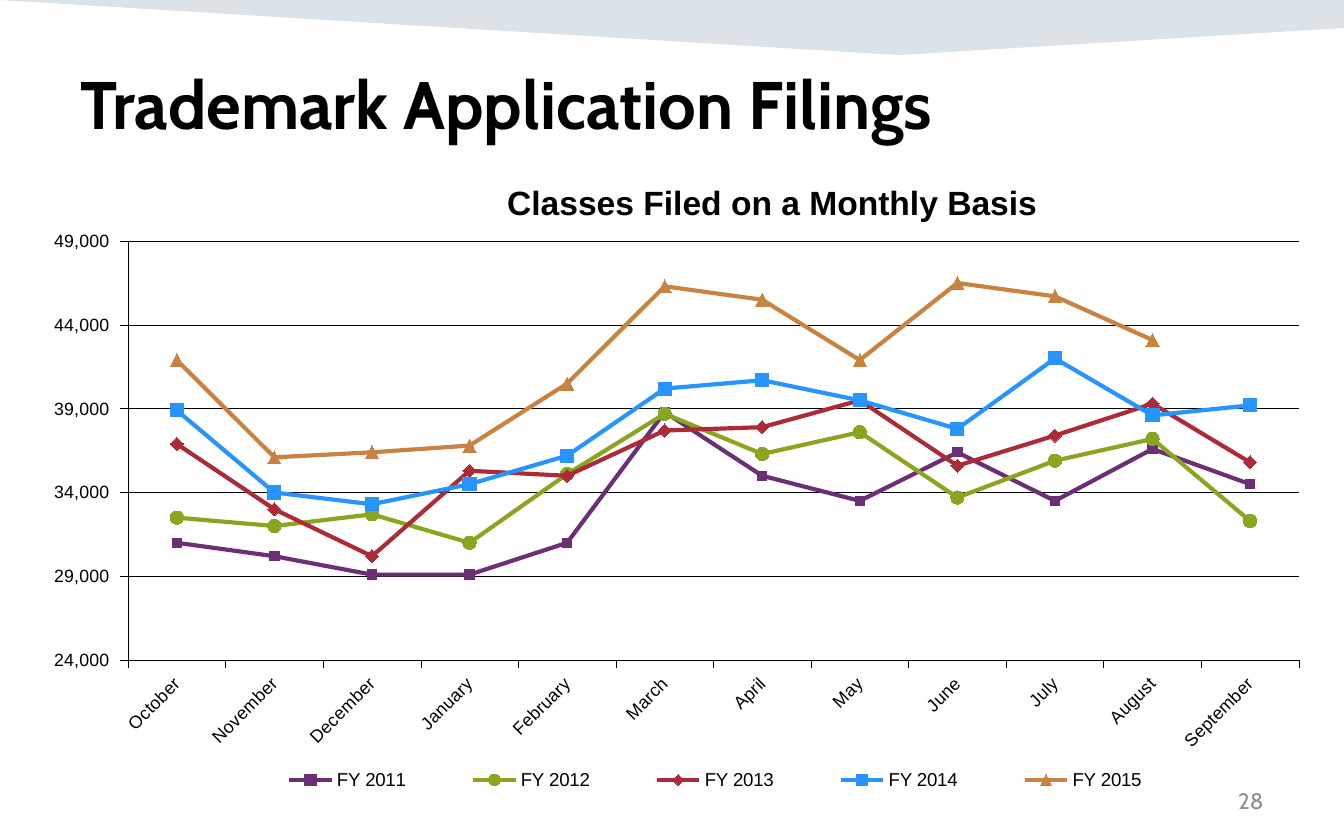
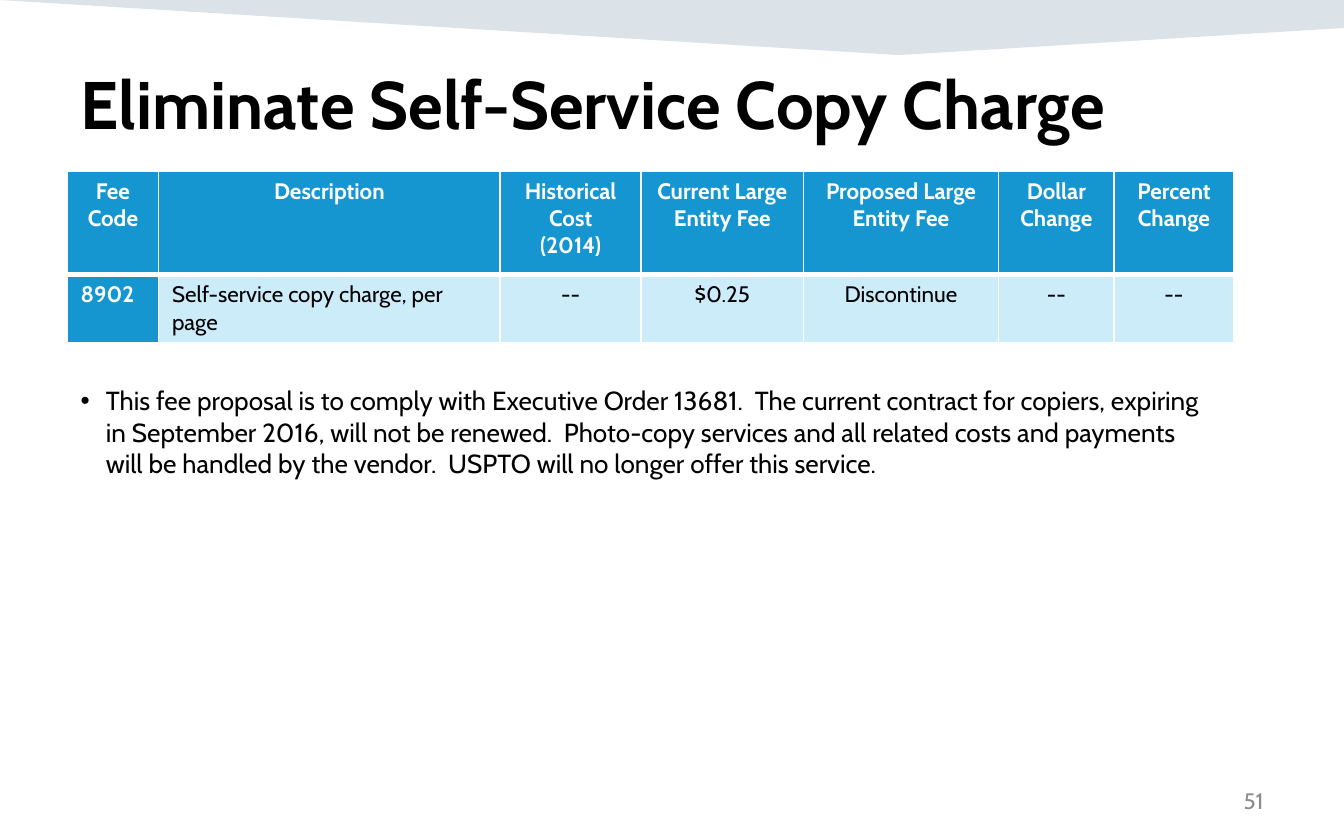
from dataclasses import dataclass

from lxml.etree import SubElement
from pptx import Presentation
from pptx.chart.data import CategoryChartData
from pptx.dml.color import RGBColor
from pptx.enum.chart import XL_CHART_TYPE, XL_LEGEND_POSITION, XL_MARKER_STYLE, XL_TICK_MARK
from pptx.enum.text import MSO_ANCHOR, MSO_AUTO_SIZE, PP_ALIGN
from pptx.oxml.ns import qn
from pptx.util import Pt


@dataclass(frozen=True)
class Theme:
    """Colours, fonts and type sizes of the deck."""
    ink: str = "000000"
    paper: str = "FFFFFF"
    band: str = "164469"
    band_alpha: int = 15000
    page_number: str = "8C8C8C"
    header: str = "1596D1"
    cell: str = "CCECFA"
    text_font: str = "Cabin"
    chart_font: str = "Arial"
    title_size: float = 36
    body_size: float = 14
    small_size: float = 12
    chart_title_size: float = 18
    legend_size: float = 10
    axis_size: float = 9.5


MONTHS = ["October", "November", "December", "January", "February", "March",
          "April", "May", "June", "July", "August", "September"]
FILINGS = [
    ("FY 2011", "6B2F75", XL_MARKER_STYLE.SQUARE, 5,
     [31000, 30200, 29100, 29100, 31000, 38800, 35000, 33500, 36400, 33500, 36600, 34500]),
    ("FY 2012", "88A620", XL_MARKER_STYLE.CIRCLE, 7,
     [32500, 32000, 32700, 31000, 35100, 38700, 36300, 37600, 33700, 35900, 37200, 32300]),
    ("FY 2013", "AC2B37", XL_MARKER_STYLE.DIAMOND, 7,
     [36900, 33000, 30200, 35300, 35000, 37700, 37900, 39500, 35600, 37400, 39300, 35800]),
    ("FY 2014", "2894FF", XL_MARKER_STYLE.SQUARE, 7,
     [38900, 34000, 33300, 34500, 36200, 40200, 40700, 39500, 37800, 42000, 38600, 39200]),
    ("FY 2015", "C88242", XL_MARKER_STYLE.TRIANGLE, 7,
     [41900, 36100, 36400, 36800, 40500, 46300, 45500, 41900, 46500, 45700, 43100, None]),
]
FEE_COLUMNS = [49, 183, 75.5, 87, 104.5, 62, 64]
FEE_ROWS = [
    ["Fee Code", "Description", "Historical Cost\n(2014)", "Current Large Entity Fee",
     "Proposed Large Entity Fee", "Dollar Change", "Percent Change"],
    ["8902", "Self-service copy charge, per page", "--", "$0.25", "Discontinue", "--", "--"],
]
COPIER_NOTE = (
    "This fee proposal is to comply with Executive Order 13681.  The current contract for "
    "copiers, expiring in September 2016, will not be renewed.  Photo-copy services and all "
    "related costs and payments will be handled by the vendor.  USPTO will no longer offer "
    "this service.")


def set_font(font, name, size, color, bold=False):
    """Apply a typeface, size, colour and weight."""
    font.name, font.size, font.bold = name, Pt(size), bold
    font.color.rgb = RGBColor.from_string(color)


def paint(fill, color):
    """Fill with one solid colour."""
    fill.solid()
    fill.fore_color.rgb = RGBColor.from_string(color)


def stroke(line, color, width):
    """Draw a solid line."""
    paint(line.fill, color)
    line.width = Pt(width)


def place(part, **fractions):
    """Position a chart part by fractions of the chart area."""
    for automatic in part.findall(qn("c:layout")):
        part.remove(automatic)
    layout = part.makeelement(qn("c:layout"))
    manual = SubElement(layout, qn("c:manualLayout"))
    if part.tag == qn("c:plotArea"):
        SubElement(manual, qn("c:layoutTarget"), val="inner")
    for side in ("x", "y"):
        SubElement(manual, qn(f"c:{side}Mode"), val="edge")
    for key, value in fractions.items():
        SubElement(manual, qn(f"c:{key}"), val=str(value))
    overlay = part.find(qn("c:overlay"))
    if overlay is None:
        part.insert(0, layout)
    else:
        overlay.addprevious(layout)


class Deck:
    """Holds the theme, the presentation and the current slide."""

    def __init__(self, theme):
        """Start an empty presentation."""
        self.theme = theme
        self.presentation = Presentation()
        self.presentation.slide_width, self.presentation.slide_height = Pt(720), Pt(450)
        self.slide = None

    def new_slide(self, layout, title):
        """Add a slide with its band and title."""
        self.slide = self.presentation.slides.add_slide(
            self.presentation.slide_layouts.get_by_name(layout))
        self.band()
        self.set_text(self.slide.shapes.title, title, (36, 29.5, 648, 40),
                      self.theme.title_size, self.theme.ink, bold=True)

    def set_text(self, shape, text, box, size, color, bold=False, align=PP_ALIGN.LEFT,
                 anchor=MSO_ANCHOR.TOP, bullet=None):
        """Place a text shape and format its single paragraph."""
        shape.left, shape.top, shape.width, shape.height = map(Pt, box)
        frame = shape.text_frame
        frame.text = text
        frame.word_wrap, frame.auto_size = True, MSO_AUTO_SIZE.NONE
        frame.vertical_anchor = anchor
        paragraph = frame.paragraphs[0]
        paragraph.alignment, paragraph.space_before = align, Pt(0)
        if bullet:
            properties = paragraph._p.get_or_add_pPr()
            properties.set("marL", str(Pt(13.5)))
            properties.set("indent", str(-Pt(13.5)))
            SubElement(properties, qn("a:buFont"), typeface=self.theme.chart_font)
            SubElement(properties, qn("a:buChar"), char=bullet)
        set_font(paragraph.font, self.theme.text_font, size, color, bold)

    def band(self):
        """Draw the tinted band along the top edge."""
        outline = self.slide.shapes.build_freeform(0, 0)
        outline.add_line_segments(
            [(Pt(x), Pt(y)) for x, y in [(720, 0), (720, 15), (481.5, 29.5)]], close=True)
        band = outline.convert_to_shape()
        band.shadow.inherit = False
        band.line.fill.background()
        paint(band.fill, self.theme.band)
        tint = band.element.find(".//" + qn("a:srgbClr"))
        SubElement(tint, qn("a:alpha"), val=str(self.theme.band_alpha))

    def page_number(self, number):
        """Set the page number at the lower right."""
        box = (516, 417, 168, 24)
        self.set_text(self.slide.shapes.add_textbox(*map(Pt, box)), str(number), box,
                      self.theme.small_size, self.theme.page_number,
                      align=PP_ALIGN.RIGHT, anchor=MSO_ANCHOR.MIDDLE)

    def bullet(self, text, box):
        """Set one bulleted statement in the body placeholder."""
        self.set_text(self.slide.placeholders[1], text, box, self.theme.body_size,
                      self.theme.ink, bullet="•")

    def line_chart(self, title, categories, rows, box):
        """Add a line chart with markers."""
        theme = self.theme
        data = CategoryChartData()
        data.categories = categories
        for name, _, _, _, values in rows:
            data.add_series(name, values)
        chart = self.slide.shapes.add_chart(
            XL_CHART_TYPE.LINE_MARKERS, *map(Pt, box), data).chart
        set_font(chart.font, theme.chart_font, theme.axis_size, theme.ink)

        chart.has_title = True
        chart.chart_title.text_frame.text = title
        set_font(chart.chart_title.text_frame.paragraphs[0].font, theme.chart_font,
                 theme.chart_title_size, theme.ink, bold=True)
        chart.has_legend = True
        chart.legend.position = XL_LEGEND_POSITION.BOTTOM
        chart.legend.include_in_layout = False
        set_font(chart.legend.font, theme.chart_font, theme.legend_size, theme.ink)

        for axis in (chart.category_axis, chart.value_axis):
            axis.major_tick_mark = XL_TICK_MARK.OUTSIDE
            stroke(axis.format.line, theme.ink, 0.25)
            set_font(axis.tick_labels.font, theme.chart_font, theme.axis_size, theme.ink)
        slant = chart.category_axis._element.find(".//" + qn("a:bodyPr"))
        slant.set("rot", "-2700000")
        amounts = chart.value_axis
        amounts.minimum_scale, amounts.maximum_scale = 24000, 49000
        amounts.major_unit = 5000
        amounts.has_major_gridlines = True
        stroke(amounts.major_gridlines.format.line, theme.ink, 0.25)
        amounts.tick_labels.number_format = r"#,##0_);[Red]\(#,##0\)"
        amounts.tick_labels.number_format_is_linked = False

        plot = chart.plots[0]
        plot.vary_by_categories = False
        for year, (_, color, marker, size, _) in zip(plot.series, rows):
            year.smooth = False
            stroke(year.format.line, color, 2.25)
            year.marker.style, year.marker.size = marker, size
            paint(year.marker.format.fill, color)
            stroke(year.marker.format.line, color, 0.75)

        area = chart.element.find(".//" + qn("c:plotArea"))
        place(area, x=0.083, y=0.138, w=0.901, h=0.62)
        place(chart.element.find(".//" + qn("c:title")), x=0.37, y=0.04)
        place(chart.element.find(".//" + qn("c:legend")), x=0.16, y=0.91, w=0.75, h=0.05)
        backdrop = SubElement(SubElement(area, qn("c:spPr")), qn("a:solidFill"))
        SubElement(backdrop, qn("a:srgbClr"), val=theme.paper)

    def borders(self, cell, **widths):
        """Give a cell white borders, in the order left, right, top, bottom."""
        properties = cell._tc.get_or_add_tcPr()
        for side, width in widths.items():
            edge = SubElement(properties, qn(f"a:ln{side}"), w=str(Pt(width)))
            SubElement(SubElement(edge, qn("a:solidFill")), qn("a:srgbClr"),
                       val=self.theme.paper)

    def table(self, rows, columns, heights, left, top):
        """Add a table with a header row and a header column."""
        theme = self.theme
        table = self.slide.shapes.add_table(
            len(rows), len(columns), Pt(left), Pt(top),
            Pt(sum(columns)), Pt(sum(heights))).table
        for column, width in zip(table.columns, columns):
            column.width = Pt(width)
        for r, (row, height) in enumerate(zip(rows, heights)):
            table.rows[r].height = Pt(height)
            for c, text in enumerate(row):
                cell = table.cell(r, c)
                heading = r == 0 or c == 0
                self.borders(cell, L=1, R=1, T=3 if r else 1, B=1 if r else 3)
                paint(cell.fill, theme.header if heading else theme.cell)
                cell.text = text
                for paragraph in cell.text_frame.paragraphs:
                    paragraph.alignment = (
                        PP_ALIGN.CENTER if r == 0 or c > 1 else PP_ALIGN.LEFT)
                    set_font(paragraph.font, theme.text_font, theme.small_size,
                             theme.paper if heading else theme.ink, heading)


def main():
    """Build the two slides and save them."""
    deck = Deck(Theme())

    deck.new_slide("Title Only", "Trademark Application Filings")
    deck.line_chart("Classes Filed on a Monthly Basis", MONTHS, FILINGS,
                    (10.8, 79.2, 696.25, 362.25))
    deck.page_number(28)

    deck.new_slide("Title and Content", "Eliminate Self-Service Copy Charge")
    deck.table(FEE_ROWS, FEE_COLUMNS, [55.5, 29], 36, 91.5)
    deck.page_number(51)
    deck.bullet(COPIER_NOTE, (36, 202.5, 615, 58.5))

    deck.presentation.save("out.pptx")


if __name__ == "__main__":
    main()
